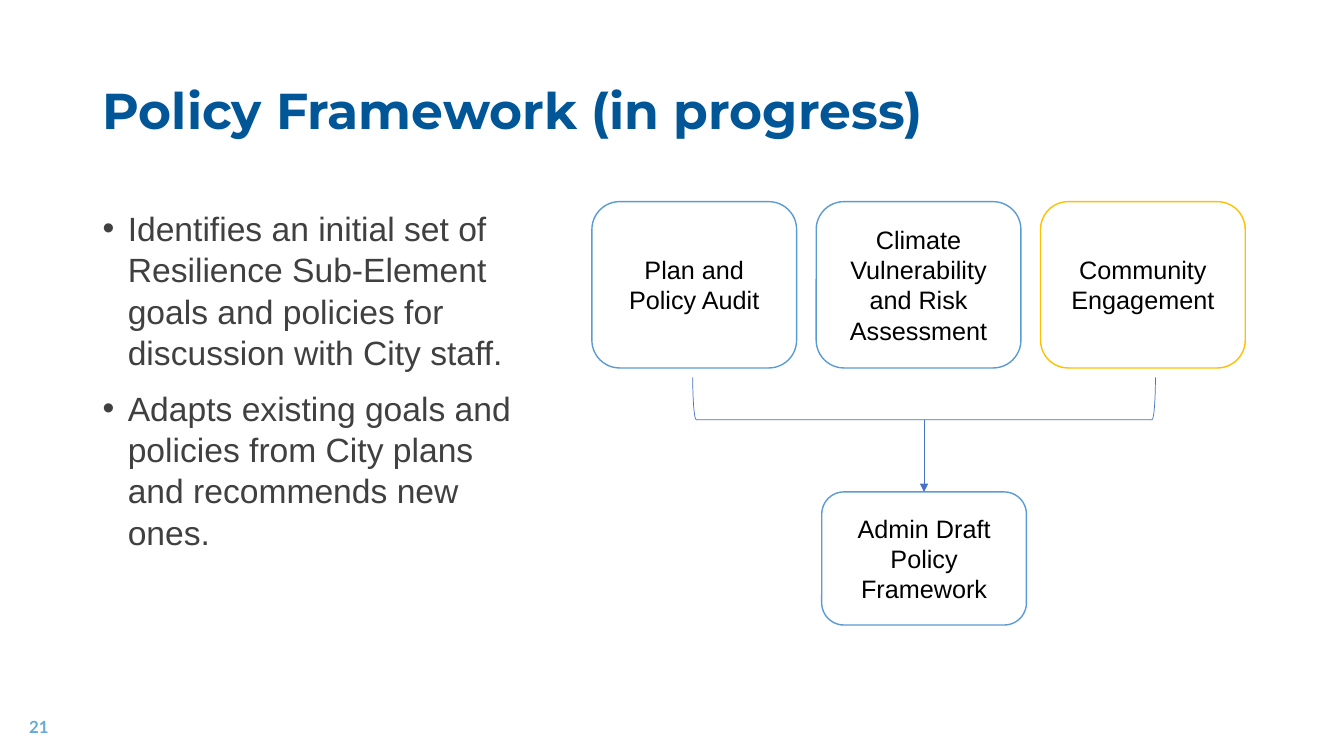
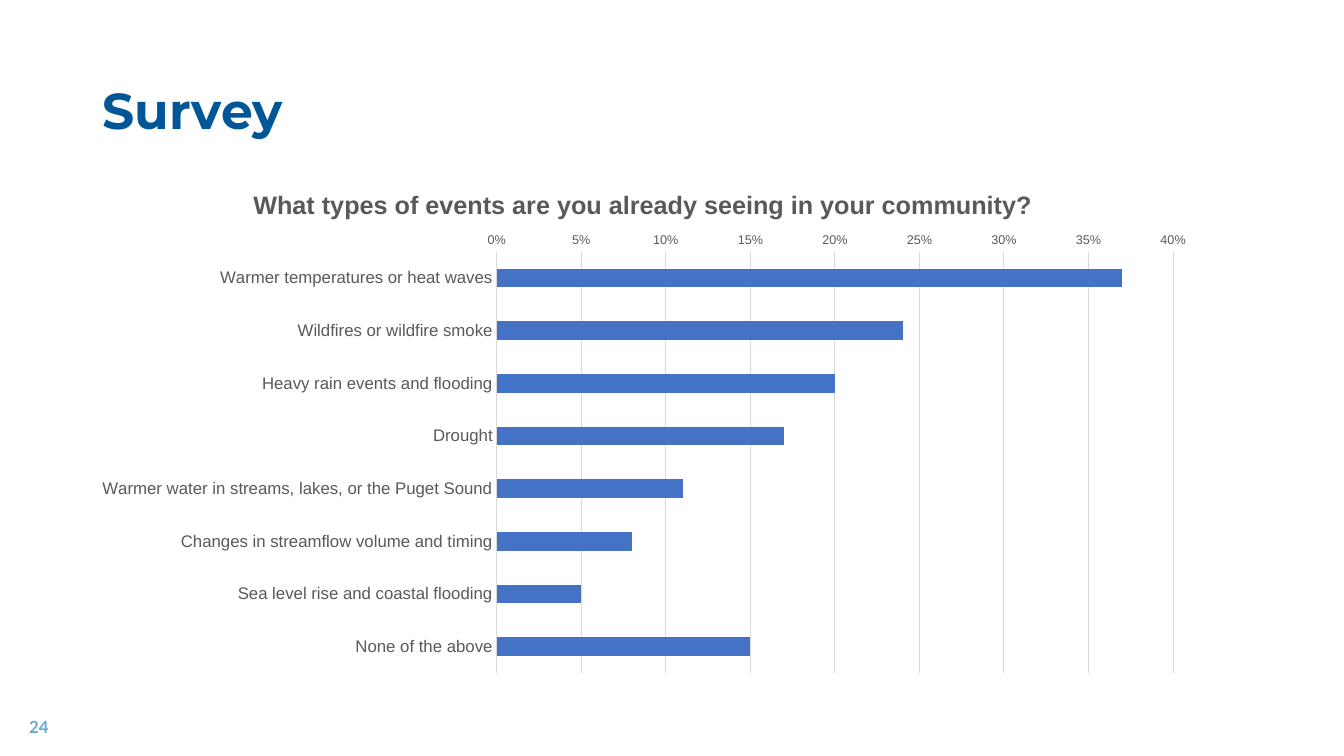
from lxml.etree import SubElement
from pptx import Presentation
from pptx.chart.data import CategoryChartData
from pptx.dml.color import RGBColor
from pptx.enum.chart import XL_CHART_TYPE, XL_TICK_MARK
from pptx.enum.shapes import MSO_CONNECTOR, MSO_SHAPE
from pptx.enum.text import MSO_ANCHOR, PP_ALIGN
from pptx.oxml.ns import qn
from pptx.util import Inches, Pt

WIDTH, HEIGHT = Inches(13.33), Inches(7.5)
NAVY, SKY, BLUE = "005696", "66AAD3", "4472C4"
CARD_BLUE, CARD_GOLD = "5B9BD5", "FFC000"
WHITE, BLACK, BODY_GREY, CHART_GREY, GRID_GREY = "FFFFFF", "000000", "404040", "595959", "D9D9D9"

# Shares of the slide, in percent
MARGIN, CONTENT_TOP = 6.9, 26.67
CARD_LEFT, CARD_STEP, CARD_WIDTH, CARD_HEIGHT = 44.04, 16.69, 15.23, 22
DRAFT_LEFT, DRAFT_TOP, DRAFT_HEIGHT = 61.14, 65.07, 17.6
BRACKET_WIDTH, BRACKET_TOP, BRACKET_HEIGHT = 34.43, 49.93, 5.6

SOURCES = [
    ("Plan and Policy Audit", CARD_BLUE),
    ("Climate Vulnerability and Risk Assessment", CARD_BLUE),
    ("Community Engagement", CARD_GOLD),
]
GOALS = [
    "Identifies an initial set of Resilience Sub-Element goals and policies for discussion with City staff.",
    "Adapts existing goals and policies from City plans and recommends new ones.",
]
QUESTION = "What types of events are you already seeing in your community?"
EVENTS = {
    "Warmer temperatures or heat waves": 0.37,
    "Wildfires or wildfire smoke": 0.24,
    "Heavy rain events and flooding": 0.2,
    "Drought": 0.17,
    "Warmer water in streams, lakes, or the Puget Sound": 0.11,
    "Changes in streamflow volume and timing": 0.08,
    "Sea level rise and coastal flooding": 0.05,
    "None of the above": 0.15,
}


def color(value):
    return RGBColor.from_string(value)


def across(percent):
    return round(WIDTH * percent / 100)


def down(percent):
    return round(HEIGHT * percent / 100)


def area(left, top, width, height):
    return across(left), down(top), across(width), down(height)


def set_font(font, size, fill, name="Arial", bold=False):
    font.size, font.name, font.bold = Pt(size), name, bold
    font.color.rgb = color(fill)


def set_line(line, fill, width):
    line.color.rgb = color(fill)
    line.width = Pt(width)


def add_bullet(paragraph, indent=Inches(0.25)):
    properties = paragraph._p.get_or_add_pPr()
    properties.set("marL", str(indent))
    properties.set("indent", str(-indent))
    SubElement(properties, qn("a:buFont"), typeface="Arial")
    SubElement(properties, qn("a:buChar"), char="•")


def write(frame, *texts, size, fill, name="Arial", bold=False, align=PP_ALIGN.LEFT,
          anchor=MSO_ANCHOR.MIDDLE, spacing=None, gap=0, bullet=False):
    """Fill a text frame with one paragraph per text."""
    frame.word_wrap = True
    frame.vertical_anchor = anchor
    for index, text in enumerate(texts):
        paragraph = frame.add_paragraph() if index else frame.paragraphs[0]
        paragraph.text = text
        paragraph.alignment = align
        if spacing:
            paragraph.line_spacing = spacing
        if index and gap:
            paragraph.space_before = Pt(gap)
        if bullet:
            add_bullet(paragraph)
        set_font(paragraph.font, size, fill, name, bold)


def add_text(slide, place, *texts, **style):
    write(slide.shapes.add_textbox(*place).text_frame, *texts, **style)


def add_page(deck, title, number):
    """Add a blank slide with the shared title and page number."""
    slide = deck.slides.add_slide(deck.slide_layouts[6])
    add_text(slide, area(MARGIN, 5.33, 86.25, 19.33), title,
             size=36, fill=NAVY, name="Montserrat", bold=True, spacing=0.9)
    add_text(slide, area(1.43, 93.47, 22.5, 5.33), str(number),
             size=12, fill=SKY, name="Lato", bold=True)
    return slide


def add_card(slide, place, label, outline):
    card = slide.shapes.add_shape(MSO_SHAPE.ROUNDED_RECTANGLE, *place)
    card.shadow.inherit = False
    card.fill.solid()
    card.fill.fore_color.rgb = color(WHITE)
    set_line(card.line, outline, 1)
    write(card.text_frame, label, size=18, fill=BLACK, align=PP_ALIGN.CENTER)
    return card


def add_bracket(slide, center, top, width, height):
    """Add a bracket that opens upwards: a right bracket turned a quarter."""
    left = center - height // 2
    bracket = slide.shapes.add_shape(MSO_SHAPE.RIGHT_BRACKET, left,
                                     top + (height - width) // 2, height, width)
    bracket.rotation = 90
    bracket.shadow.inherit = False
    bracket.fill.background()
    set_line(bracket.line, BLUE, 0.5)


def add_arrow_to(slide, target, start_y):
    """Add an arrow straight down to the top of the target."""
    center = target.left + target.width // 2
    arrow = slide.shapes.add_connector(MSO_CONNECTOR.STRAIGHT, center, start_y, center, target.top)
    arrow.end_connect(target, 0)
    set_line(arrow.line, BLUE, 0.5)
    SubElement(arrow.line._get_or_add_ln(), qn("a:tailEnd"), type="triangle")
    SubElement(arrow._element.spPr, qn("a:effectLst"))


def set_layout(parent, index, **shares):
    """Place a chart part by shares of the chart's size."""
    for old in parent.findall(qn("c:layout")):
        parent.remove(old)
    layout = parent.makeelement(qn("c:layout"))
    parent.insert(index, layout)
    manual = SubElement(layout, qn("c:manualLayout"))
    if "w" in shares:
        SubElement(manual, qn("c:layoutTarget"), val="inner")
    for side in "xy":
        SubElement(manual, qn(f"c:{side}Mode"), val="edge")
    for side, share in shares.items():
        SubElement(manual, qn(f"c:{side}"), val=str(share))


def style_axis(axis, size):
    axis.major_tick_mark = axis.minor_tick_mark = XL_TICK_MARK.NONE
    set_font(axis.tick_labels.font, size, CHART_GREY)


def add_bar_chart(slide, place, title, values):
    data = CategoryChartData(number_format="0%")
    data.categories = list(values)
    data.add_series("Series 1", list(values.values()))
    chart = slide.shapes.add_chart(XL_CHART_TYPE.BAR_CLUSTERED, *place, data).chart
    set_font(chart.font, 10, BLACK)
    chart.has_legend = False
    write(chart.chart_title.text_frame, title, size=18, fill=CHART_GREY, bold=True,
          align=PP_ALIGN.CENTER)
    set_layout(chart.chart_title._element, 1, x=0.15, y=0.04)
    set_layout(chart._chartSpace.chart.plotArea, 0, x=0.37, y=0.17, w=0.6, h=0.81)

    plot = chart.plots[0]
    plot.gap_width = 182
    plot.vary_by_categories = False
    bars = plot.series[0].format.fill
    bars.solid()
    bars.fore_color.rgb = color(BLUE)

    events = chart.category_axis
    style_axis(events, 12)
    events.reverse_order = True
    set_line(events.format.line, GRID_GREY, 0.75)

    percents = chart.value_axis
    style_axis(percents, 9)
    percents.minimum_scale, percents.maximum_scale, percents.major_unit = 0, 0.4, 0.05
    percents.tick_labels.number_format = "0%"
    percents.tick_labels.number_format_is_linked = False
    percents.format.line.fill.background()
    set_line(percents.major_gridlines.format.line, GRID_GREY, 0.75)


def add_framework_page(deck):
    slide = add_page(deck, "Policy Framework (in progress)", 21)
    add_text(slide, area(MARGIN, CONTENT_TOP, 32.33, 63.47), *GOALS, size=24, fill=BODY_GREY,
             anchor=MSO_ANCHOR.TOP, spacing=Pt(29.6), gap=10, bullet=True)
    for column, (label, outline) in enumerate(SOURCES):
        left = CARD_LEFT + column * CARD_STEP
        add_card(slide, area(left, CONTENT_TOP, CARD_WIDTH, CARD_HEIGHT), label, outline)
    draft = add_card(slide, area(DRAFT_LEFT, DRAFT_TOP, CARD_WIDTH, DRAFT_HEIGHT),
                     "Admin Draft Policy Framework", CARD_BLUE)
    add_bracket(slide, draft.left + draft.width // 2, down(BRACKET_TOP),
                across(BRACKET_WIDTH), down(BRACKET_HEIGHT))
    add_arrow_to(slide, draft, down(BRACKET_TOP + BRACKET_HEIGHT))


def add_survey_page(deck):
    slide = add_page(deck, "Survey", 24)
    add_bar_chart(slide, area(5.93, 21.6, 83.87, 68.8), QUESTION, EVENTS)


def main():
    deck = Presentation()
    deck.slide_width, deck.slide_height = WIDTH, HEIGHT
    add_framework_page(deck)
    add_survey_page(deck)
    deck.save("out.pptx")


if __name__ == "__main__":
    main()
